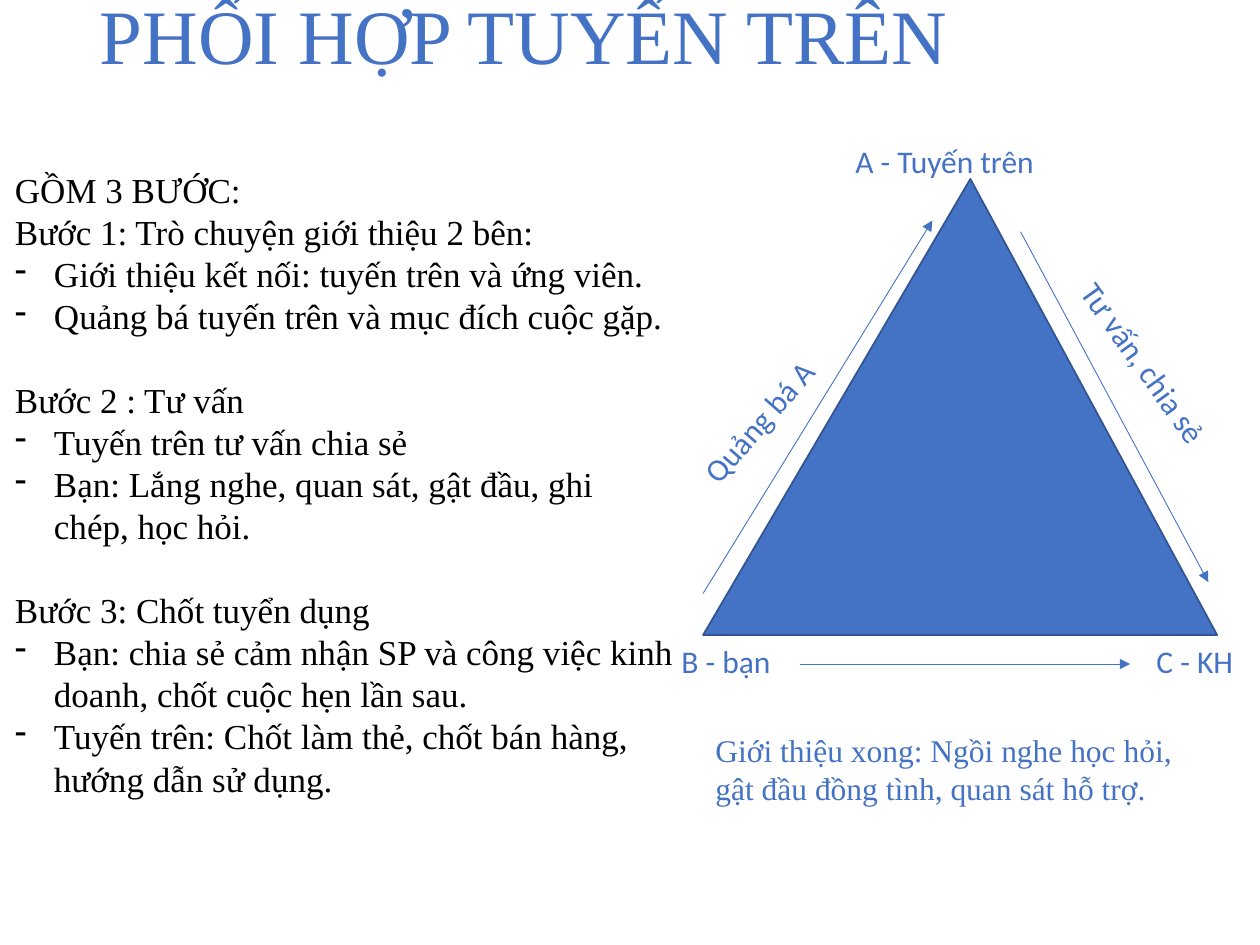
from lxml import etree
from pptx import Presentation
from pptx.dml.color import RGBColor
from pptx.enum.shapes import MSO_CONNECTOR, MSO_SHAPE
from pptx.enum.text import MSO_ANCHOR, MSO_AUTO_SIZE, PP_ALIGN
from pptx.oxml.ns import qn
from pptx.util import Inches, Pt

BLUE, DARK_BLUE, BLACK = "4472C4", "325491", "000000"
SERIF, SANS = "Times New Roman", "Calibri"

STEPS = [
    ("Bước 1: Trò chuyện giới thiệu 2 bên:", [
        "Giới thiệu kết nối: tuyến trên và ứng viên.",
        "Quảng bá tuyến trên và mục đích cuộc gặp."]),
    ("Bước 2 : Tư vấn", [
        "Tuyến trên tư vấn chia sẻ",
        "Bạn: Lắng nghe, quan sát, gật đầu, ghi chép, học hỏi."]),
    ("Bước 3: Chốt tuyển dụng", [
        "Bạn: chia sẻ cảm nhận SP và công việc kinh doanh, chốt cuộc hẹn lần sau.",
        "Tuyến trên: Chốt làm thẻ, chốt bán hàng, hướng dẫn sử dụng."]),
]


def color(hex_value):
    return RGBColor.from_string(hex_value)


class SlideBuilder:
    """Holds the text and line style together with the slide being filled."""

    def __init__(self, slide, label_size=18, arrow_width=0.5):
        self.slide = slide
        self.label_size = label_size
        self.arrow_width = arrow_width

    def text_frame(self, box, wrap=True, rotation=0):
        textbox = self.slide.shapes.add_textbox(*map(Inches, box))
        textbox.rotation = rotation
        frame = textbox.text_frame
        frame.word_wrap = wrap
        frame.auto_size = MSO_AUTO_SIZE.SHAPE_TO_FIT_TEXT
        return frame

    def set_text(self, paragraph, text, font, size, ink):
        paragraph.text = text
        paragraph.font.name = font
        paragraph.font.size = Pt(size)
        paragraph.font.color.rgb = color(ink)

    def title(self, text, box):
        frame = self.text_frame(box)
        frame.auto_size = MSO_AUTO_SIZE.NONE
        frame.vertical_anchor = MSO_ANCHOR.MIDDLE
        frame.margin_left = frame.margin_right = 0
        frame.margin_top = frame.margin_bottom = 0
        heading = frame.paragraphs[0]
        heading.alignment = PP_ALIGN.CENTER
        heading.line_spacing = 0.9
        self.set_text(heading, text, SERIF, 44, BLUE)

    def label(self, text, box, font=SANS, wrap=True, rotation=0):
        frame = self.text_frame(box, wrap, rotation)
        self.set_text(frame.paragraphs[0], text, font, self.label_size, BLUE)

    def step_list(self, intro, steps, box, size=20, indent=0.31):
        frame = self.text_frame(box)
        self.set_text(frame.paragraphs[0], intro, SERIF, size, BLACK)
        for number, (heading, actions) in enumerate(steps):
            step = frame.add_paragraph()
            if number:
                step.space_before = Pt(size * 1.2)
            self.set_text(step, heading, SERIF, size, BLACK)
            for action in actions:
                item = frame.add_paragraph()
                self.dash(item, indent)
                self.set_text(item, action, SERIF, size, BLACK)

    def dash(self, paragraph, indent):
        """Give the paragraph a hanging dash bullet."""
        properties = paragraph._p.get_or_add_pPr()
        properties.set("marL", str(Inches(indent)))
        properties.set("indent", str(-Inches(indent)))
        etree.SubElement(properties, qn("a:buChar")).set("char", "-")

    def triangle(self, box, apex):
        """Draw a triangle whose apex is a fraction of its width."""
        triangle = self.slide.shapes.add_shape(
            MSO_SHAPE.ISOSCELES_TRIANGLE, *map(Inches, box))
        triangle.adjustments[0] = apex
        triangle.shadow.inherit = False
        triangle.fill.solid()
        triangle.fill.fore_color.rgb = color(BLUE)
        triangle.line.color.rgb = color(DARK_BLUE)
        triangle.line.width = Pt(1)

    def arrow(self, start, end):
        arrow = self.slide.shapes.add_connector(
            MSO_CONNECTOR.STRAIGHT, *map(Inches, start + end))
        arrow.line.color.rgb = color(BLUE)
        arrow.line.width = Pt(self.arrow_width)
        outline = arrow.line._get_or_add_ln()
        etree.SubElement(outline, qn("a:tailEnd")).set("type", "triangle")
        etree.SubElement(arrow._element.spPr, qn("a:effectLst"))


def main():
    presentation = Presentation()
    presentation.slide_width = Inches(10)
    presentation.slide_height = Inches(7.5)
    slide = presentation.slides.add_slide(presentation.slide_layouts[6])
    builder = SlideBuilder(slide)

    builder.title("PHỐI HỢP TUYẾN TRÊN", (0.69, 0, 6.94, 0.63))
    builder.triangle((5.58, 1.42, 4.08, 3.62), apex=0.52)

    builder.label("A - Tuyến trên", (6.69, 1.08, 1.66, 0.4), wrap=False)
    builder.label("B - bạn", (5.31, 5.05, 0.94, 0.4), wrap=False)
    builder.label("C - KH", (9.08, 5.05, 0.92, 0.4))

    builder.arrow((6.35, 5.27), (8.97, 5.27))
    builder.arrow((5.58, 4.71), (7.4, 1.75))
    builder.arrow((8.1, 1.84), (9.59, 4.62))

    builder.label("Quảng bá A", (5.33, 3.14, 1.39, 0.4), wrap=False, rotation=311.2)
    builder.label("Tư vấn, chia sẻ", (8.23, 2.69, 1.71, 0.4), rotation=54.5)
    builder.label("Giới thiệu xong: Ngồi nghe học hỏi, gật đầu đồng tình, quan sát hỗ trợ.",
                  (5.58, 5.75, 3.83, 0.71), font=SERIF)
    builder.step_list("GỒM 3 BƯỚC:", STEPS, (0.02, 1.29, 5.42, 5.45))

    presentation.save("out.pptx")


if __name__ == "__main__":
    main()
